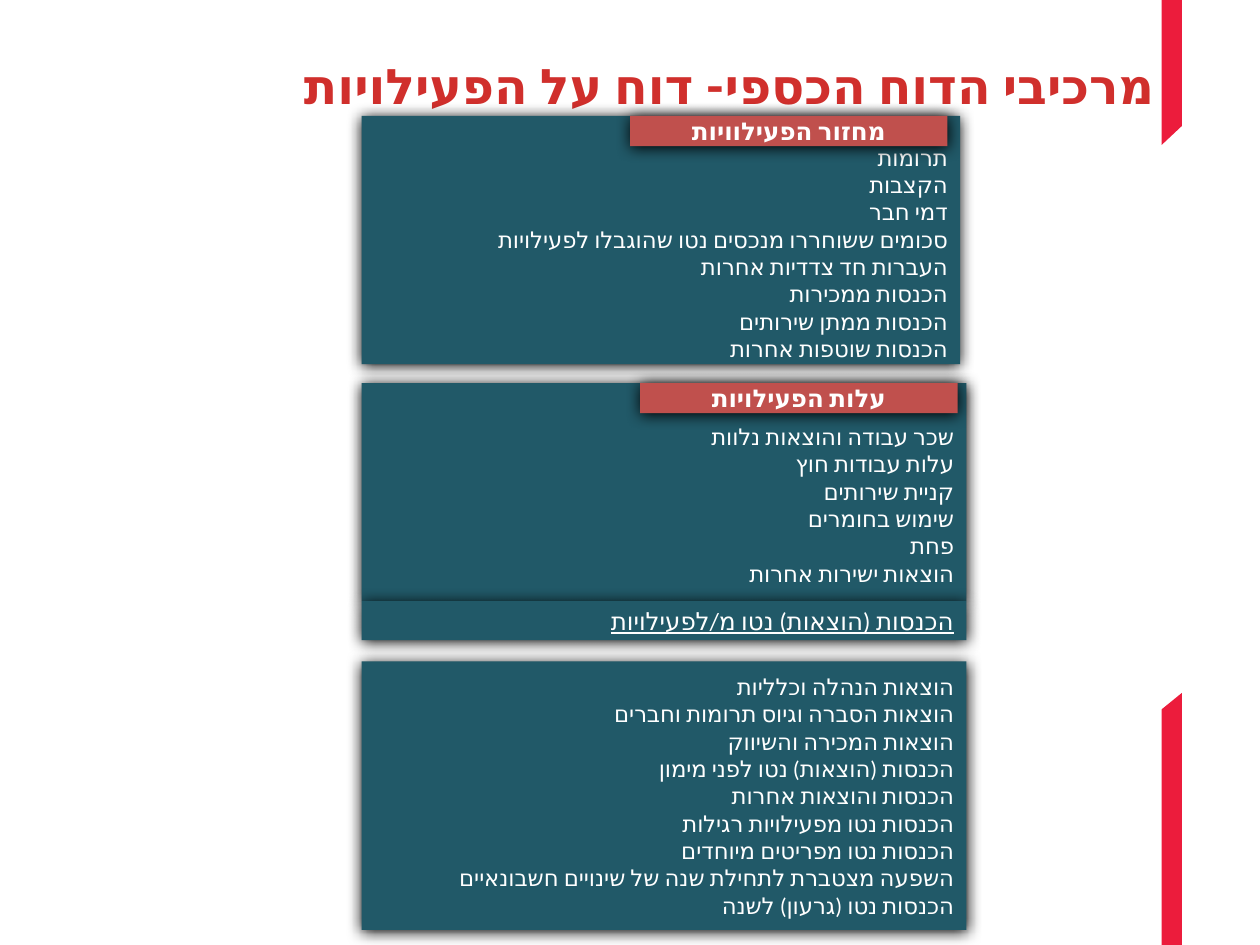
from lxml.etree import SubElement
from pptx import Presentation
from pptx.dml.color import RGBColor
from pptx.enum.lang import MSO_LANGUAGE_ID as Lang
from pptx.enum.shapes import MSO_SHAPE as Shape
from pptx.enum.text import MSO_ANCHOR as Anchor, PP_ALIGN as Align
from pptx.oxml.ns import qn
from pptx.util import Inches, Pt

# One grid unit is a tenth of an inch: 100 columns by 75 rows
COLUMNS, ROWS = 100, 75


def unit(count):
    return Inches(count / 10)


def color(hex_code):
    return RGBColor.from_string(hex_code)


def write(frame, text, size=13, font="Calibri", ink="FFFFFF", bold=False,
          underline=False, align=Align.RIGHT):
    """Fill a text frame with right-to-left lines of one format."""
    frame.text = text
    for line in frame.paragraphs:
        line.alignment = align
        line._p.get_or_add_pPr().set("rtl", "1")
        for run in line.runs:
            style = run.font
            style.size, style.name = Pt(size), font
            style.bold, style.underline = bold, underline
            style.color.rgb = color(ink)
            style.language_id = Lang.HEBREW
            SubElement(run._r.rPr, qn("a:cs"), typeface=font)


class ReportSlide:
    TEAL, BRICK, CRIMSON, TITLE_RED = "215968", "C0504D", "EC1C3C", "D02F2C"

    def __init__(self, deck):
        self.shapes = deck.slides.add_slide(deck.slide_layouts[6]).shapes

    def ribbon(self, points):
        builder = self.shapes.build_freeform(*map(unit, points[0]), scale=1.0)
        builder.add_line_segments([tuple(map(unit, p)) for p in points[1:]])
        band = builder.convert_to_shape()
        band.shadow.inherit = False
        band.fill.solid()
        band.fill.fore_color.rgb = color(self.CRIMSON)
        band.line.fill.background()

    def title(self, text, left, top, width, height):
        frame = self.shapes.add_textbox(*map(unit, (left, top, width, height))).text_frame
        frame.word_wrap = True
        write(frame, text, size=28, font="Roboto", ink=self.TITLE_RED, bold=True)

    def block(self, text, left, top, width, height, fill=TEAL, header=0, **style):
        """Shadowed rectangle; header is the room kept free above its text."""
        box = self.shapes.add_shape(Shape.RECTANGLE, *map(unit, (left, top, width, height)))
        box.fill.solid()
        box.fill.fore_color.rgb = color(fill)
        box.line.fill.background()
        self.soft_shadow(box)
        frame = box.text_frame
        frame.word_wrap = True
        frame.vertical_anchor = Anchor.MIDDLE
        frame.margin_top, frame.margin_bottom = unit(header), 0
        write(frame, text, **style)

    def badge(self, text, left, top):
        self.block(text, left, top, 25.2, 2.4, fill=self.BRICK,
                   size=14, bold=True, align=Align.CENTER)

    @staticmethod
    def soft_shadow(box):
        box.shadow.inherit = False
        effects = box._element.spPr.find(qn("a:effectLst"))
        shadow = SubElement(effects, qn("a:outerShdw"), blurRad=str(Pt(8.5)),
                            dist=str(Pt(1)), dir="5400000", rotWithShape="0")
        SubElement(shadow, qn("a:srgbClr"), val="000000")


INCOME = """תרומות
הקצבות
דמי חבר
סכומים ששוחררו מנכסים נטו שהוגבלו לפעילויות
העברות חד צדדיות אחרות
הכנסות ממכירות
הכנסות ממתן שירותים
הכנסות שוטפות אחרות"""

COSTS = """שכר עבודה והוצאות נלוות
עלות עבודות חוץ
קניית שירותים
שימוש בחומרים
פחת
הוצאות ישירות אחרות"""

NET_RESULTS = """הוצאות הנהלה וכלליות
הוצאות הסברה וגיוס תרומות וחברים
הוצאות המכירה והשיווק
הכנסות (הוצאות) נטו לפני מימון
הכנסות והוצאות אחרות
הכנסות נטו מפעילויות רגילות
הכנסות נטו מפריטים מיוחדים
השפעה מצטברת לתחילת שנה של שינויים חשבונאיים
הכנסות נטו (גרעון) לשנה"""


def main():
    deck = Presentation()
    deck.slide_width, deck.slide_height = unit(COLUMNS), unit(ROWS)
    report = ReportSlide(deck)

    # Side ribbons
    inner, outer = 92.2, 93.8
    report.ribbon([(outer, 55), (outer, ROWS), (inner, ROWS), (inner, 56.3)])
    report.ribbon([(outer, 10), (outer, 0), (inner, 0), (inner, 11.5)])

    report.title("מרכיבי הדוח הכספי- דוח על הפעילויות", 7.8, 3.9, 84.8, 5.5)

    # Statement sections, top to bottom
    left, width = 28.7, 48
    income_top, costs_top = 9.2, 30.4
    report.block(INCOME, left, income_top, 47.5, 19.7, header=2)
    report.block(COSTS, left, costs_top, width, 17.3, header=2)
    report.block("הכנסות (הוצאות) נטו מ/לפעילויות", left, 47.7, width, 3.1,
                 size=14, underline=True)
    report.block(NET_RESULTS, left, 52.5, width, 21.3)

    # Section headings
    report.badge("מחזור הפעילוויות", 50, income_top)
    report.badge("עלות הפעילויות", 50.8, costs_top)

    deck.save("out.pptx")


if __name__ == "__main__":
    main()
